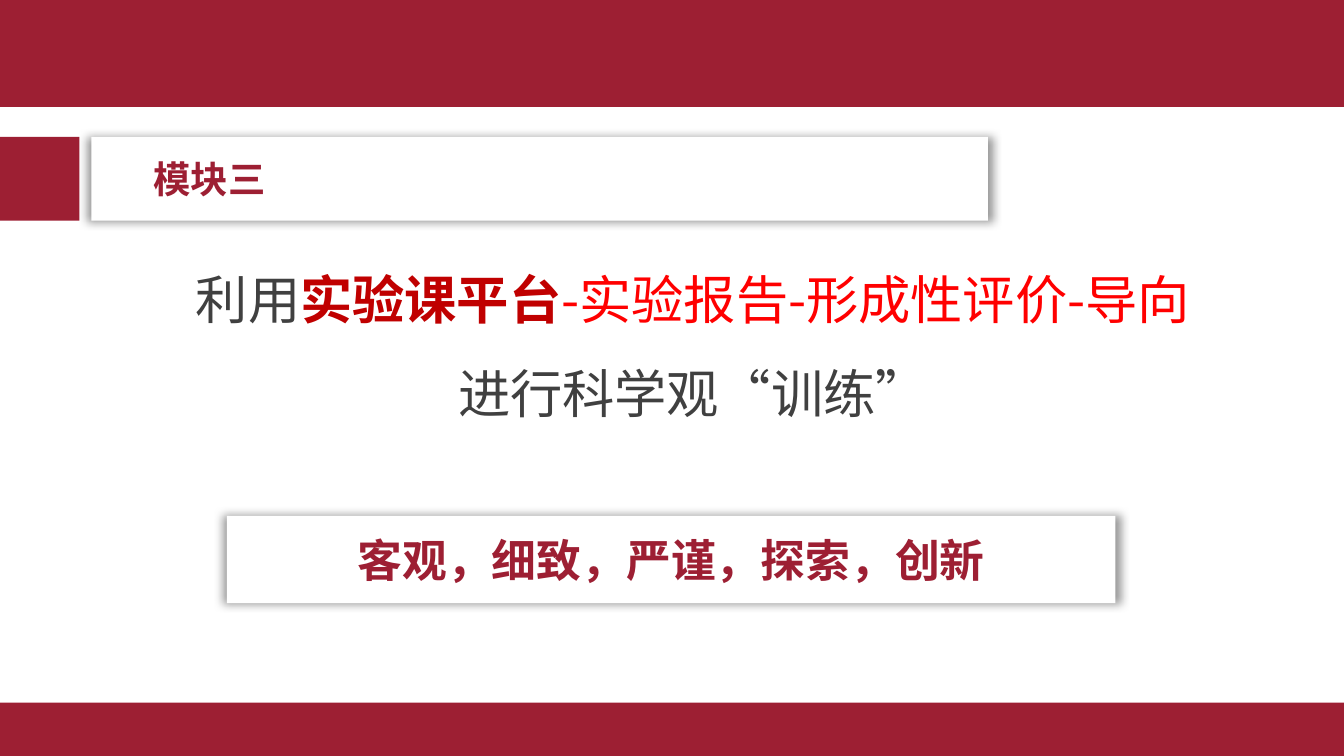
from typing import NamedTuple, Optional

from lxml.etree import SubElement
from pptx import Presentation
from pptx.dml.color import RGBColor
from pptx.enum.shapes import MSO_SHAPE
from pptx.enum.text import MSO_ANCHOR, MSO_AUTO_SIZE, PP_ALIGN
from pptx.oxml.ns import qn
from pptx.util import Cm, Pt

CRIMSON = RGBColor(0x9D, 0x1F, 0x33)
WHITE = RGBColor(0xFF, 0xFF, 0xFF)
GREY = RGBColor(0x40, 0x40, 0x40)
DARK_RED = RGBColor(0xC0, 0x00, 0x00)
RED = RGBColor(0xFF, 0x00, 0x00)
FONT = "Noto Sans CJK SC"


class Box(NamedTuple):
    left: float
    top: float
    width: float
    height: float


class Card(NamedTuple):
    box: Box
    text: str
    size: int
    align: PP_ALIGN
    indent: float


class Part(NamedTuple):
    text: str
    color: RGBColor
    bold: bool = False


BANDS = [
    Box(0, 13.28, 25.4, 1.01),  # footer
    Box(0, 0, 25.4, 2.02),  # header
    Box(0, 2.59, 1.5, 1.58),  # section marker
]
CARDS = [
    Card(Box(4.29, 9.75, 16.79, 1.65), "客观，细致，严谨，探索，创新", 24, PP_ALIGN.CENTER, 0.25),
    Card(Box(1.73, 2.59, 16.94, 1.58), "模块三", 20, PP_ALIGN.LEFT, 1.17),
]
STATEMENT_BOX = Box(2.77, 4.75, 20.65, 2.97)
STATEMENT = [
    [Part("利用", GREY), Part("实验课平台", DARK_RED, True),
     Part("-实验报告-形成性评价-导向", RED)],
    [Part("进行科学观“训练”", GREY)],
]


def format_run(r, size: int, color: RGBColor, bold: bool) -> None:
    r.font.size = Pt(size)
    r.font.bold = bold
    r.font.color.rgb = color
    r.font.name = FONT
    SubElement(r.font._element, qn("a:ea"), typeface=FONT)


def add_rect(s, box: Box, fill: RGBColor):
    sp = s.shapes.add_shape(MSO_SHAPE.RECTANGLE, *map(Cm, box))
    sp.shadow.inherit = False
    sp.fill.solid()
    sp.fill.fore_color.rgb = fill
    sp.line.fill.background()
    return sp


def add_glow_shadow(sp) -> None:
    """Soft shadow, slightly wider than the shape."""
    effects = sp._element.spPr.find(qn("a:effectLst"))
    shadow = SubElement(effects, qn("a:outerShdw"), blurRad=str(Pt(5)), dist="0",
                        sx="101000", sy="101000", algn="ctr", rotWithShape="0")
    color = SubElement(shadow, qn("a:srgbClr"), val="000000")
    SubElement(color, qn("a:alpha"), val="40000")


def add_card(s, card: Card) -> None:
    sp = add_rect(s, card.box, WHITE)
    add_glow_shadow(sp)
    tf = sp.text_frame
    tf.text = card.text
    tf.margin_left = Cm(card.indent)
    tf.vertical_anchor = MSO_ANCHOR.MIDDLE
    p = tf.paragraphs[0]
    p.alignment = card.align
    format_run(p.runs[0], card.size, CRIMSON, True)


def fill_statement(title, box: Box, lines: list[list[Part]], size: int,
                   spacing: Optional[float] = None) -> None:
    title.left, title.top, title.width, title.height = map(Cm, box)
    tf = title.text_frame
    tf.word_wrap = True
    tf.auto_size = MSO_AUTO_SIZE.NONE
    tf.vertical_anchor = MSO_ANCHOR.MIDDLE
    for i, parts in enumerate(lines):
        p = tf.add_paragraph() if i else tf.paragraphs[0]
        p.alignment = PP_ALIGN.CENTER
        p.line_spacing = spacing
        p.space_before = Pt(0)
        for part in parts:
            r = p.add_run()
            r.text = part.text
            format_run(r, size, part.color, part.bold)


def main() -> None:
    prs = Presentation()
    prs.slide_width, prs.slide_height = Cm(25.4), Cm(14.29)
    s = prs.slides.add_slide(prs.slide_layouts[5])

    # Central statement
    fill_statement(s.shapes.title, STATEMENT_BOX, STATEMENT, 28, 1.5)

    # Coloured bands
    for band in BANDS:
        add_rect(s, band, CRIMSON)

    # White cards: key words and section name
    for card in CARDS:
        add_card(s, card)

    prs.save("out.pptx")


if __name__ == "__main__":
    main()
